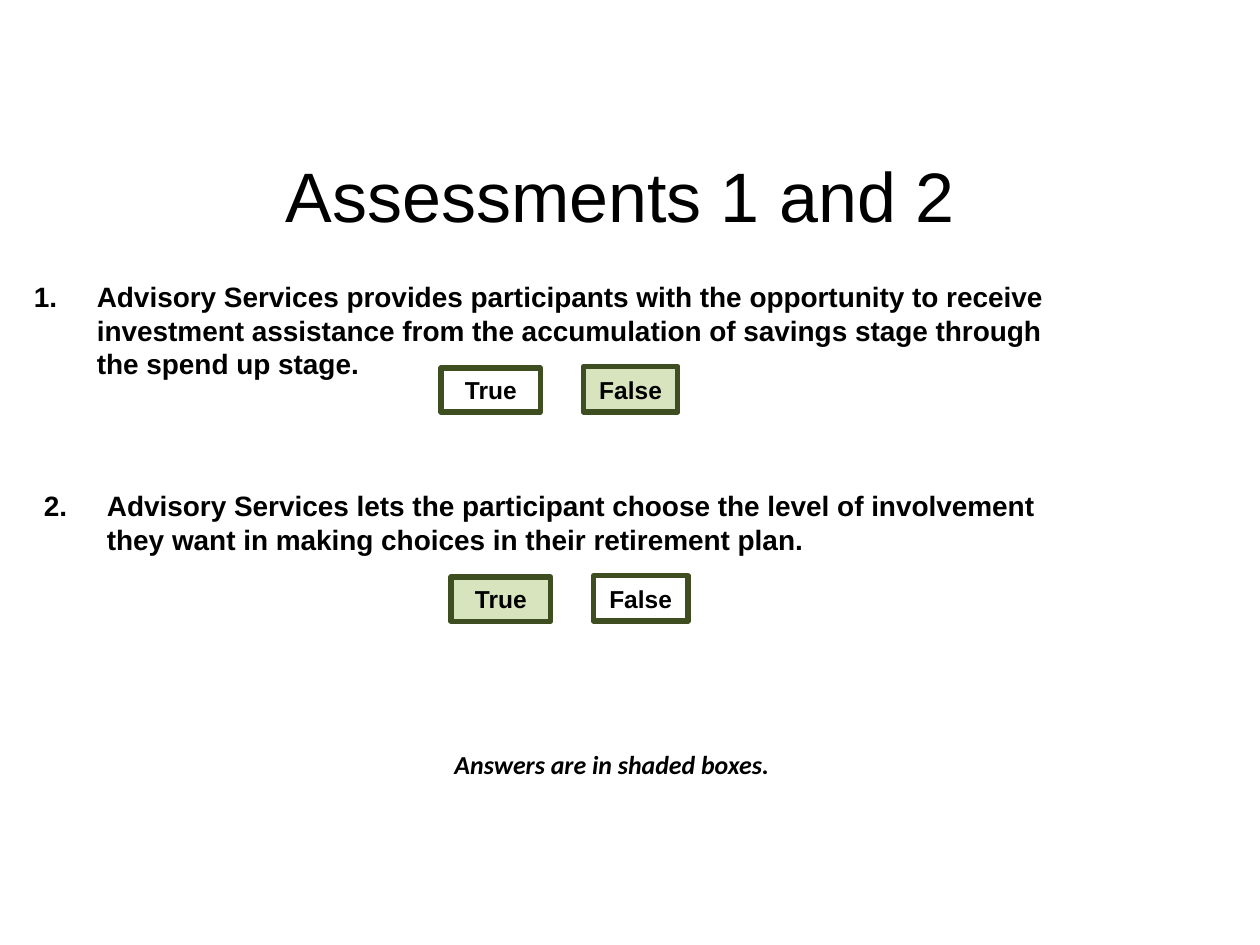
from lxml import etree
from pptx import Presentation
from pptx.dml.color import RGBColor
from pptx.enum.shapes import MSO_SHAPE
from pptx.enum.text import MSO_ANCHOR, PP_ALIGN
from pptx.oxml.ns import qn
from pptx.util import Inches, Pt

COLORS = {"text": "000000", "border": "3E4E20", "answer": "D7E4BD"}
FORMATS = {
    "title": {"name": "Arial", "size": Pt(40)},
    "question": {"name": "Arial", "size": Pt(16), "bold": True},
    "choice": {"name": "Arial", "size": Pt(14), "bold": True},
    "note": {"name": "Calibri", "size": Pt(14.8), "bold": True, "italic": True},
}


def write(shape, text, style, align, anchor=MSO_ANCHOR.TOP):
    frame = shape.text_frame
    frame.word_wrap = True
    frame.vertical_anchor = anchor
    paragraph = frame.paragraphs[0]
    paragraph.text = text
    paragraph.alignment = align
    font = paragraph.runs[0].font
    for attribute, value in FORMATS[style].items():
        setattr(font, attribute, value)
    font.color.rgb = RGBColor.from_string(COLORS["text"])
    return paragraph


def number(paragraph, start):
    properties = paragraph._p.get_or_add_pPr()
    properties.set("marL", str(Inches(0.5)))
    properties.set("indent", str(Inches(-0.5)))
    etree.SubElement(properties, qn("a:buFont"), typeface="+mj-lt")
    etree.SubElement(properties, qn("a:buAutoNum"), type="arabicPeriod", startAt=str(start))


presentation = Presentation()
presentation.slide_width = Inches(10)
presentation.slide_height = Inches(7.5)
slide = presentation.slides.add_slide(presentation.slide_layouts[6])
shapes = slide.shapes

# Title
title = shapes.add_textbox(Inches(0.42), Inches(0.92), Inches(9), Inches(1.25))
write(title, "Assessments 1 and 2", "title", PP_ALIGN.CENTER, MSO_ANCHOR.MIDDLE)

# Questions: left, top, height, top of choices, wording, right answer
questions = [
    (0.17, 2.17, 1.17, 2.91,
     "Advisory Services provides participants with the opportunity to receive investment "
     "assistance from the accumulation of savings stage through the spend up stage.", "False"),
    (0.25, 3.83, 1.42, 4.57,
     "Advisory Services lets the participant choose the level of involvement they want "
     "in making choices in their retirement plan.", "True"),
]
# Choices: label, offset from the question's left, offset from the row top, width, height
choices = [("True", 3.33, 0.01, 0.79, 0.35), ("False", 4.46, 0, 0.75, 0.36)]

for index, (left, top, height, choice_top, wording, answer) in enumerate(questions, 1):
    question = shapes.add_textbox(Inches(left), Inches(top), Inches(8.55), Inches(height))
    number(write(question, wording, "question", PP_ALIGN.LEFT), index)

    for label, across, down, width, box_height in choices:
        choice = shapes.add_shape(
            MSO_SHAPE.ACTION_BUTTON_CUSTOM, Inches(left + across), Inches(choice_top + down),
            Inches(width), Inches(box_height))
        choice.shadow.inherit = False
        choice.line.color.rgb = RGBColor.from_string(COLORS["border"])
        choice.line.width = Pt(3)
        if label == answer:
            choice.fill.solid()
            choice.fill.fore_color.rgb = RGBColor.from_string(COLORS["answer"])
        else:
            choice.fill.background()
        write(choice, label, "choice", PP_ALIGN.CENTER, MSO_ANCHOR.MIDDLE)

# Note on the answers
note = shapes.add_textbox(Inches(0.58), Inches(5.92), Inches(8.55), Inches(0.33))
write(note, "Answers are in shaded boxes.", "note", PP_ALIGN.CENTER).line_spacing = 0.9

presentation.save("out.pptx")
